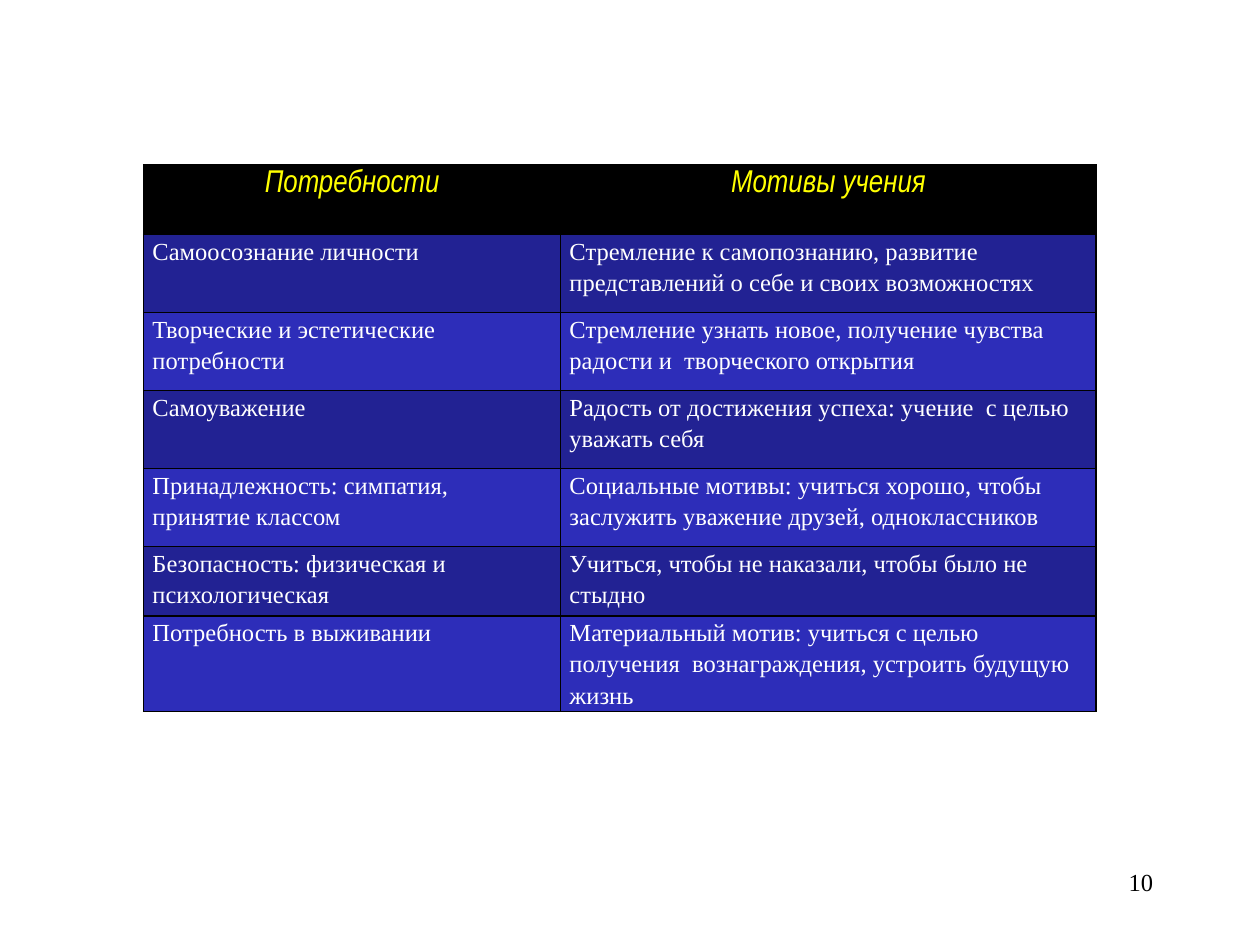
from pptx import Presentation
from pptx.dml.color import RGBColor as RGB
from pptx.enum.text import MSO_ANCHOR as Anchor, PP_ALIGN as Align
from pptx.oxml import parse_xml as parse
from pptx.oxml.ns import nsdecls
from pptx.util import Inches, Pt

HEX = {"head": "000000", "dark": "222293", "light": "2D2DB9",
       "gold": "FFFF00", "white": "FFFFFF", "line": "000000"}
HEAD = {"name": "Arial Narrow", "size": Pt(18), "italic": True}
BODY = {"name": "Times New Roman", "size": Pt(14), "italic": False}
PAD = {"margin_left": Inches(0.07), "margin_right": Inches(0.07),
       "margin_top": 0, "margin_bottom": 0, "vertical_anchor": Anchor.TOP}

ROWS = [
    ("Потребности", "Мотивы учения"),
    ("Самоосознание личности",
     "Стремление к самопознанию, развитие представлений о себе и своих возможностях"),
    ("Творческие и эстетические потребности",
     "Стремление узнать новое, получение чувства радости и  творческого открытия"),
    ("Самоуважение",
     "Радость от достижения успеха: учение  с целью  уважать себя"),
    ("Принадлежность: симпатия, принятие классом",
     "Социальные мотивы: учиться хорошо, чтобы заслужить уважение друзей, одноклассников"),
    ("Безопасность: физическая и психологическая",
     "Учиться, чтобы не наказали, чтобы было не стыдно"),
    ("Потребность в выживании",
     "Материальный мотив: учиться с целью  получения  вознаграждения, устроить будущую жизнь"),
]
WIDE = [3.31, 4.25]
HIGH = [0.55] + [0.62] * 4 + [0.55, 0.76]


def style(para, text, font, tint, align):
    para.alignment = align
    run = para.add_run()
    run.text = text
    for key, val in font.items():
        setattr(run.font, key, val)
    run.font.color.rgb = RGB.from_string(HEX[tint])


def border(cell):
    props = cell._tc.get_or_add_tcPr()
    for spot, side in enumerate(("lnL", "lnR", "lnT", "lnB")):
        props.insert(spot, parse(
            f'<a:{side} {nsdecls("a")} w="{Pt(1)}"><a:solidFill>'
            f'<a:srgbClr val="{HEX["line"]}"/></a:solidFill></a:{side}>'))


prs = Presentation()
prs.slide_width, prs.slide_height = Inches(10), Inches(7.5)
slide = prs.slides.add_slide(prs.slide_layouts[6])

grid = slide.shapes.add_table(
    len(ROWS), len(WIDE), Inches(1.14), Inches(1.31),
    Inches(sum(WIDE)), Inches(sum(HIGH))).table
for col, wide in zip(grid.columns, WIDE):
    col.width = Inches(wide)

for r, (texts, high) in enumerate(zip(ROWS, HIGH)):
    grid.rows[r].height = Inches(high)
    if r == 0:
        fill, font, tint, align = "head", HEAD, "gold", Align.CENTER
    else:
        fill, font, tint, align = "dark" if r % 2 else "light", BODY, "white", Align.LEFT
    for c, text in enumerate(texts):
        cell = grid.cell(r, c)
        for key, val in PAD.items():
            setattr(cell, key, val)
        cell.fill.solid()
        cell.fill.fore_color.rgb = RGB.from_string(HEX[fill])
        border(cell)
        para = cell.text_frame.paragraphs[0]
        para.line_spacing = 1.15
        style(para, text, font, tint, align)

page = slide.shapes.add_textbox(Inches(7.17), Inches(6.83), Inches(2.08), Inches(0.5))
page.text_frame.word_wrap = True
style(page.text_frame.paragraphs[0], "10", BODY, "line", Align.RIGHT)

prs.save("out.pptx")
